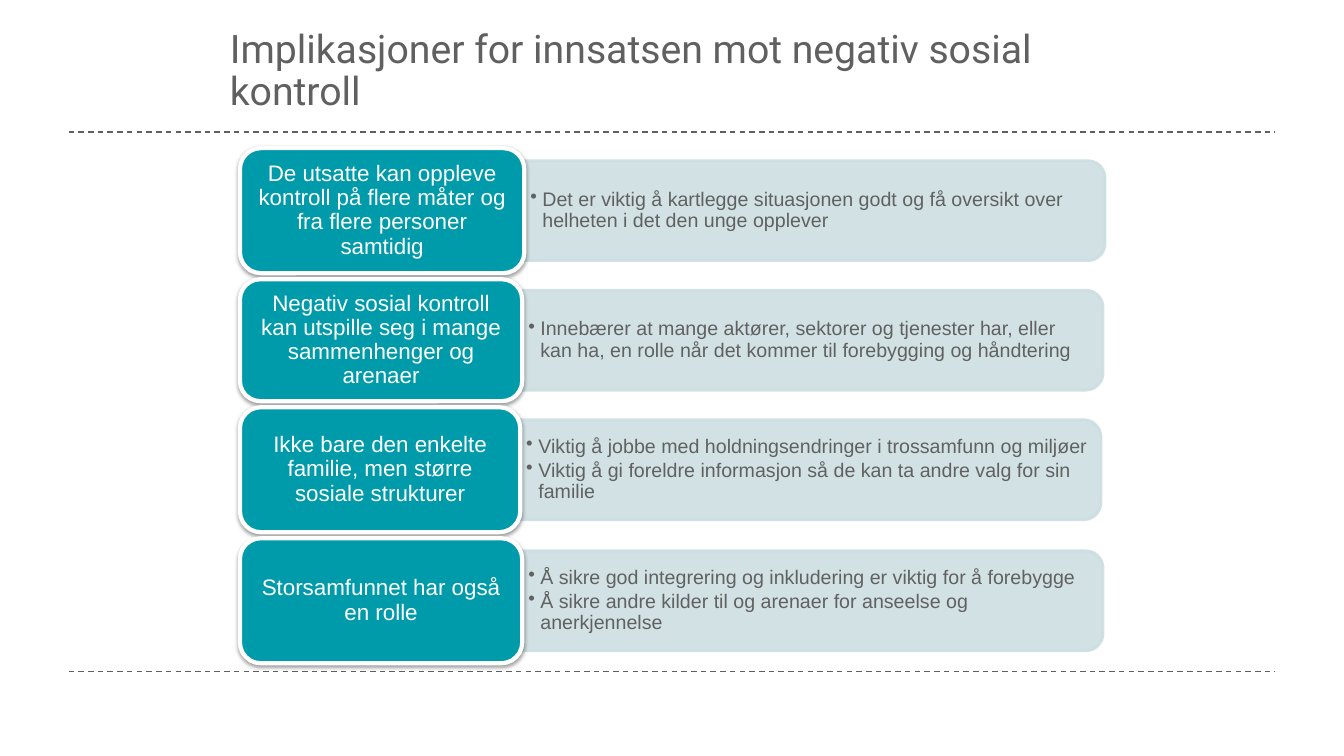
from dataclasses import dataclass
from math import cos, pi, sin

from pptx import Presentation
from pptx.dml.color import RGBColor
from pptx.enum.dml import MSO_LINE_DASH_STYLE as Dash
from pptx.enum.shapes import MSO_CONNECTOR as Connector, MSO_SHAPE as Shape
from pptx.enum.text import MSO_ANCHOR as Anchor, MSO_AUTO_SIZE as AutoSize, PP_ALIGN as Align
from pptx.oxml.ns import qn
from pptx.util import Inches, Pt
from lxml.etree import SubElement


@dataclass(frozen=True)
class Theme:
    title_font: str = "Roboto"
    body_font: str = "Arial"
    title_size: float = 28
    theme_size: float = 16
    action_size: float = 14
    title_ink: str = "606060"
    action_ink: str = "616161"
    card: str = "009BAA"
    panel: str = "CCDEE2"
    white: str = "FFFFFF"
    shadow: str = "000000"


TITLE = "Implikasjoner for innsatsen mot negativ sosial kontroll"

# theme, actions, card width, card height
ROWS = [
    ("De utsatte kan oppleve kontroll på flere måter og fra flere personer samtidig",
     ["Det er viktig å kartlegge situasjonen godt og få oversikt over helheten i det den unge opplever"],
     2.82, 1.24),
    ("Negativ sosial kontroll kan utspille seg i mange sammenhenger og arenaer",
     ["Innebærer at mange aktører, sektorer og tjenester har, eller kan ha, en rolle når det "
      "kommer til forebygging og håndtering"],
     2.8, 1.21),
    ("Ikke bare den enkelte familie, men større sosiale strukturer",
     ["Viktig å jobbe med holdningsendringer i trossamfunn og miljøer",
      "Viktig å gi foreldre informasjon så de kan ta andre valg for sin familie"],
     2.78, 1.24),
    ("Storsamfunnet har også en rolle",
     ["Å sikre god integrering og inkludering er viktig for å forebygge",
      "Å sikre andre kilder til og arenaer for anseelse og anerkjennelse"],
     2.8, 1.24),
]
CARD_LEFT, FIRST_TOP, ROW_GAP = 2.38, 1.47, 0.06
PANEL_WIDTH, PANEL_HEIGHT = 5.76, 0.99
RULE_LEFT, RULE_RIGHT, RULE_TOPS = 0.68, 12.65, (1.31, 6.66)


def write(frame, paragraphs, *, font, size, color, align=Align.LEFT, insets=None,
          after=0, bullet=False):
    """Fill a text frame, one paragraph per string; insets run left, top, right, bottom."""
    frame.word_wrap = True
    frame.auto_size = AutoSize.NONE
    frame.vertical_anchor = Anchor.MIDDLE
    if insets:
        (frame.margin_left, frame.margin_top,
         frame.margin_right, frame.margin_bottom) = map(Inches, insets)
    for index, text in enumerate(paragraphs):
        paragraph = frame.add_paragraph() if index else frame.paragraphs[0]
        if bullet:
            properties = paragraph._p.get_or_add_pPr()
            properties.set("marL", str(Inches(0.12)))
            properties.set("indent", str(Inches(-0.12)))
            SubElement(properties, qn("a:buChar"), char="•")
        paragraph.alignment = align
        paragraph.line_spacing = 0.9
        paragraph.space_after = Pt(after)
        run = paragraph.add_run()
        run.text = text
        run.font.name = font
        run.font.size = Pt(size)
        run.font.color.rgb = RGBColor.from_string(color)


def paint(shape, fill, line, width, alpha=None):
    shape.shadow.inherit = False
    shape.fill.solid()
    shape.fill.fore_color.rgb = RGBColor.from_string(fill)
    shape.line.color.rgb = RGBColor.from_string(line)
    shape.line.width = Pt(width)
    if alpha:
        for color in shape._element.spPr.iter(qn("a:srgbClr")):
            SubElement(color, qn("a:alpha"), val=str(alpha * 1000))


class SlideBuilder:
    def __init__(self, slide, theme):
        self.slide = slide
        self.theme = theme

    def title(self, text):
        title = self.slide.shapes.title
        title.left, title.top, title.width, title.height = map(Inches, (2.18, 0.21, 9, 1.01))
        write(title.text_frame, [text], font=self.theme.title_font,
              size=self.theme.title_size, color=self.theme.title_ink)

    def dashed_rule(self, top):
        rule = self.slide.shapes.add_connector(
            Connector.STRAIGHT, Inches(RULE_LEFT), Inches(top), Inches(RULE_RIGHT), Inches(top))
        rule.line.color.rgb = RGBColor.from_string(self.theme.title_ink)
        rule.line.width = Pt(1)
        rule.line.dash_style = Dash.DASH
        SubElement(rule._element.spPr, qn("a:effectLst"))

    def action_panel(self, left, top, actions):
        """Draw a panel with square left corners and rounded right corners."""
        radius, steps = 0.17, 12
        right, bottom = left + PANEL_WIDTH, top + PANEL_HEIGHT
        corners = [(top + radius, -pi / 2), (bottom - radius, 0)]
        outline = [(right - radius + radius * cos(start + pi / 2 * step / steps),
                    middle + radius * sin(start + pi / 2 * step / steps))
                   for middle, start in corners for step in range(steps + 1)]
        outline.append((left, bottom))
        builder = self.slide.shapes.build_freeform(Inches(left), Inches(top))
        builder.add_line_segments([(Inches(x), Inches(y)) for x, y in outline], close=True)
        panel = builder.convert_to_shape()
        paint(panel, self.theme.panel, self.theme.panel, 2, alpha=90)
        write(panel.text_frame, actions, font=self.theme.body_font, size=self.theme.action_size,
              color=self.theme.action_ink, insets=(0.06, 0.08, 0.11, 0.08), after=2, bullet=True)

    def theme_card(self, top, width, height, text):
        card = self.slide.shapes.add_shape(
            Shape.ROUNDED_RECTANGLE, Inches(CARD_LEFT), Inches(top), Inches(width), Inches(height))
        paint(card, self.theme.card, self.theme.white, 3)
        effects = card._element.spPr.find(qn("a:effectLst"))
        shadow = SubElement(effects, qn("a:outerShdw"), blurRad=str(Pt(3.1)), dist=str(Pt(1.6)),
                            dir="5400000", rotWithShape="0")
        color = SubElement(shadow, qn("a:srgbClr"), val=self.theme.shadow)
        SubElement(color, qn("a:alpha"), val="38000")
        write(card.text_frame, [text], font=self.theme.body_font, size=self.theme.theme_size,
              color=self.theme.white, align=Align.CENTER, insets=(0.07, 0.03, 0.07, 0.03), after=6)


def main():
    presentation = Presentation()
    presentation.slide_width, presentation.slide_height = Inches(13.33), Inches(7.5)
    title_only = presentation.slide_layouts[5]
    builder = SlideBuilder(presentation.slides.add_slide(title_only), Theme())

    for rule_top in RULE_TOPS:
        builder.dashed_rule(rule_top)
    builder.title(TITLE)

    top = FIRST_TOP
    for theme_text, actions, width, height in ROWS:
        builder.action_panel(CARD_LEFT + width, top + (height - PANEL_HEIGHT) / 2, actions)
        builder.theme_card(top, width, height, theme_text)
        top += height + ROW_GAP

    presentation.save("out.pptx")


if __name__ == "__main__":
    main()
